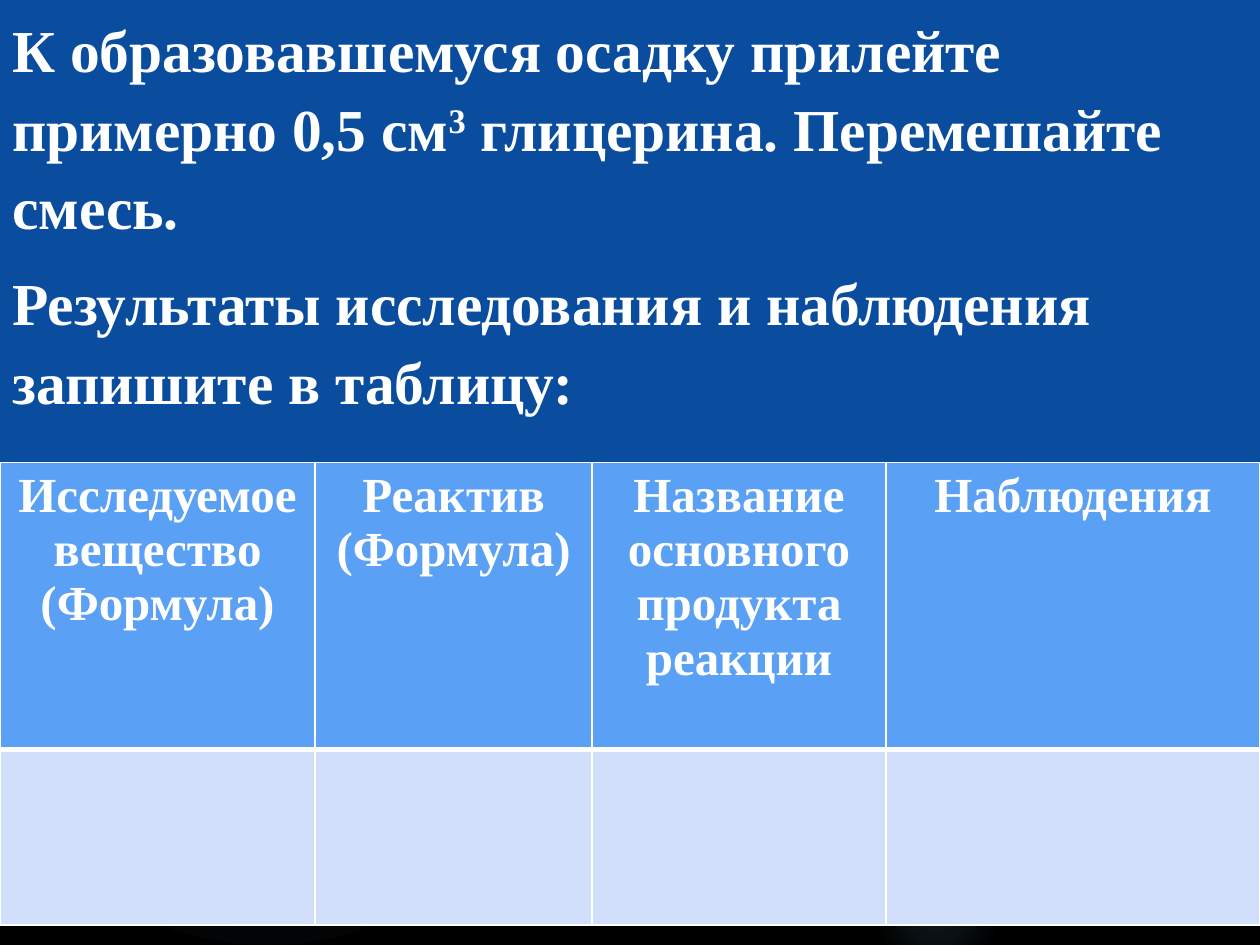
"""Build a chemistry lab slide: instructions above an observation table."""
from dataclasses import dataclass
from typing import Any

from lxml.etree import SubElement
from pptx import Presentation
from pptx.dml.color import RGBColor
from pptx.enum.shapes import MSO_SHAPE
from pptx.enum.text import MSO_ANCHOR, PP_ALIGN
from pptx.oxml import parse_xml
from pptx.oxml.ns import nsdecls, qn
from pptx.util import Inches, Pt

BLACK = RGBColor(0x00, 0x00, 0x00)
WHITE = RGBColor(0xFF, 0xFF, 0xFF)
NAVY = RGBColor(0x0A, 0x4D, 0x9E)
HEADER_BLUE = RGBColor(0x5A, 0xA0, 0xF5)
PALE_BLUE = RGBColor(0xD2, 0xDF, 0xFB)
GLOW_BLUE = RGBColor(0x7A, 0xC4, 0xF0)

FONT = {"name": "Times New Roman", "bold": True}
BODY_FONT = FONT | {"size": Pt(34)}
HEADER_FONT = FONT | {"size": Pt(28)}
BODY_PARAGRAPH = {"space_before": Pt(10), "line_spacing": 1.1, "alignment": PP_ALIGN.LEFT}
HEADER_PARAGRAPH = {"alignment": PP_ALIGN.CENTER}


@dataclass(frozen=True)
class Span:
    text: str
    baseline: int = 0


@dataclass(frozen=True)
class Glow:
    left: float
    top: float
    diameter: float
    stops: tuple[tuple[int, int], ...]


@dataclass(frozen=True)
class Column:
    width: float
    lines: tuple[str, ...]


GLOWS = (
    Glow(6.89, 6.67, 1.08, ((0, 14), (36, 7), (66, 0))),
    Glow(-0.17, 2.92, 4.58, ((0, 11), (36, 10), (75, 0))),
)
INSTRUCTIONS = (
    (
        Span("К образовавшемуся осадку прилейте примерно 0,5 см"),
        Span("3", baseline=30),
        Span(" глицерина. Перемешайте смесь."),
    ),
    (Span("Результаты исследования и наблюдения запишите в таблицу:"),),
)
COLUMNS = (
    Column(2.5, ("Исследуемое вещество", "(Формула)")),
    Column(2.2, ("Реактив", "(Формула)")),
    Column(2.33, ("Название основного продукта реакции",)),
    Column(2.97, ("Наблюдения",)),
)
ROW_HEIGHTS = (2.28, 1.39)


def apply_format(target: Any, values: dict[str, Any]) -> None:
    for name, value in values.items():
        setattr(target, name, value)


def write_paragraphs(
    frame: Any, paragraphs: Any, paragraph_format: dict[str, Any], font: dict[str, Any]
) -> None:
    for index, spans in enumerate(paragraphs):
        para = frame.add_paragraph() if index else frame.paragraphs[0]
        apply_format(para, paragraph_format)
        for span in spans:
            run = para.add_run()
            run.text = span.text
            apply_format(run.font, font)
            run.font.color.rgb = WHITE
            if span.baseline:
                run.font._element.set("baseline", str(span.baseline * 1000))


def draw_glow(page: Any, glow: Glow) -> None:
    size = Inches(glow.diameter)
    circle = page.shapes.add_shape(
        MSO_SHAPE.OVAL, Inches(glow.left), Inches(glow.top), size, size
    )
    circle.shadow.inherit = False
    circle.line.fill.background()
    stops = "".join(
        f'<a:gs pos="{position * 1000}"><a:srgbClr val="{GLOW_BLUE}">'
        f'<a:alpha val="{alpha * 1000}"/></a:srgbClr></a:gs>'
        for position, alpha in glow.stops
    )
    gradient = parse_xml(
        f'<a:gradFill {nsdecls("a")}><a:gsLst>{stops}</a:gsLst><a:path path="circle">'
        '<a:fillToRect l="50000" t="50000" r="50000" b="50000"/></a:path></a:gradFill>'
    )
    circle._element.spPr.find(qn("a:prstGeom")).addnext(gradient)


def draw_instructions(page: Any) -> None:
    box = page.shapes.add_shape(MSO_SHAPE.RECTANGLE, 0, 0, Inches(10), Inches(3.78))
    box.shadow.inherit = False
    box.fill.solid()
    box.fill.fore_color.rgb = NAVY
    box.line.fill.background()
    apply_format(box.text_frame, {"word_wrap": True, "vertical_anchor": MSO_ANCHOR.TOP})
    write_paragraphs(box.text_frame, INSTRUCTIONS, BODY_PARAGRAPH, BODY_FONT)


def style_cell(cell: Any, color: RGBColor, borders: dict[str, int]) -> None:
    cell.fill.solid()
    cell.fill.fore_color.rgb = color
    properties = cell._tc.get_or_add_tcPr()
    for index, (side, width) in enumerate(borders.items()):
        line = parse_xml(f'<a:ln{side} {nsdecls("a")} w="{Pt(width)}"/>')
        fill = SubElement(line, qn("a:solidFill"))
        SubElement(fill, qn("a:srgbClr"), val=str(WHITE))
        properties.insert(index, line)


def draw_table(page: Any) -> None:
    table = page.shapes.add_table(
        len(ROW_HEIGHTS), len(COLUMNS), 0, Inches(3.67), Inches(10), Inches(sum(ROW_HEIGHTS))
    ).table
    for row, height in zip(table.rows, ROW_HEIGHTS):
        row.height = Inches(height)
    for index, column in enumerate(COLUMNS):
        table.columns[index].width = Inches(column.width)
        header, answer = table.cell(0, index), table.cell(1, index)
        style_cell(header, HEADER_BLUE, {"L": 1, "R": 1, "T": 1, "B": 3})
        style_cell(answer, PALE_BLUE, {"L": 1, "R": 1, "T": 3, "B": 1})
        lines = [(Span(line),) for line in column.lines]
        write_paragraphs(header.text_frame, lines, HEADER_PARAGRAPH, HEADER_FONT)


def main() -> None:
    deck = Presentation()
    apply_format(deck, {"slide_width": Inches(10), "slide_height": Inches(7.5)})
    page = deck.slides.add_slide(deck.slide_layouts[6])
    page.background.fill.solid()
    page.background.fill.fore_color.rgb = BLACK
    for glow in GLOWS:
        draw_glow(page, glow)
    draw_instructions(page)
    draw_table(page)
    deck.save("out.pptx")


if __name__ == "__main__":
    main()
